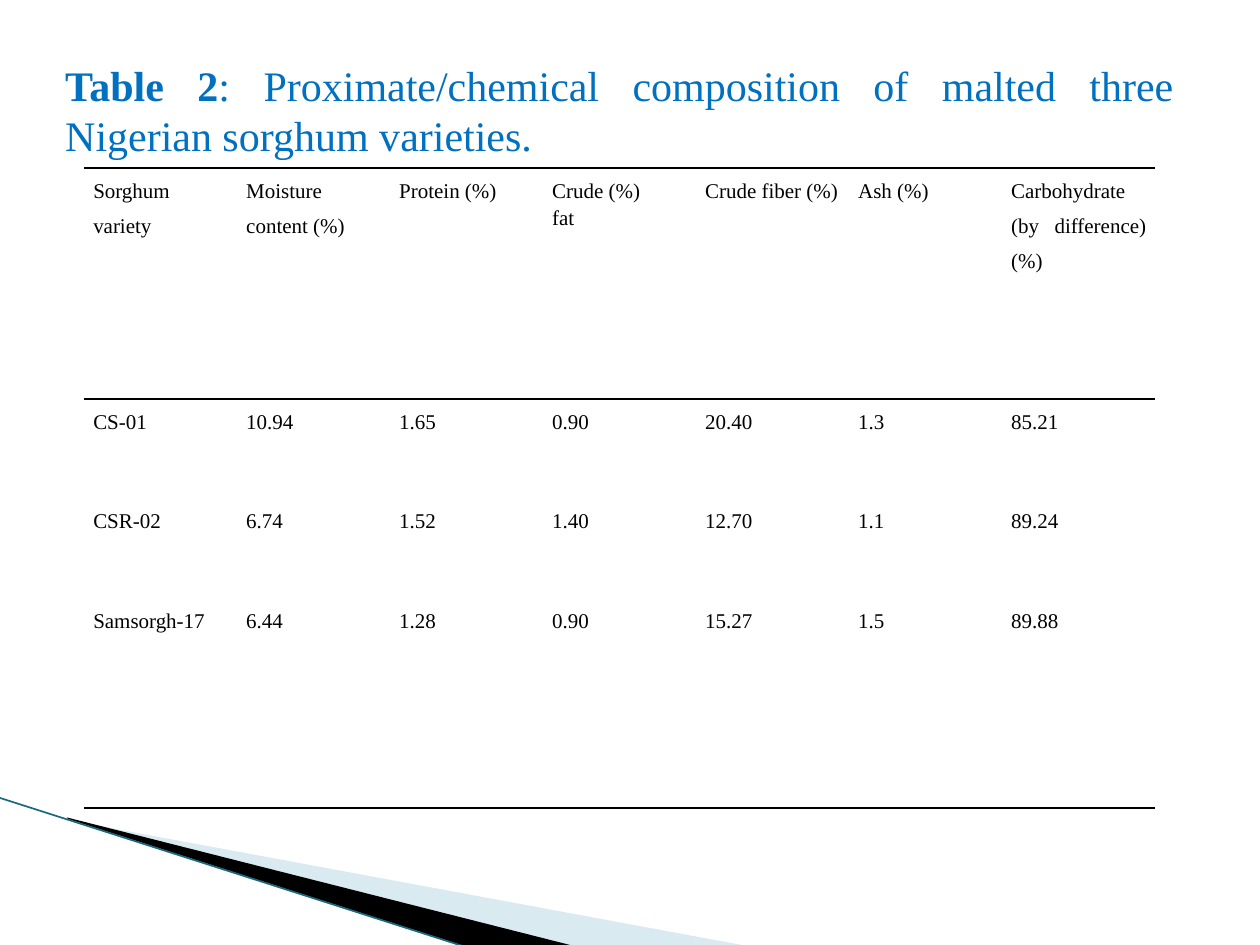
"""Build the slide with the proximate composition table of malted sorghum."""
import pptx
import pptx.dml.color
import pptx.enum.shapes
import pptx.enum.text
import pptx.oxml
import pptx.oxml.ns
import pptx.util
from pptx.util import Cm

FONT = "Times New Roman"
COLORS = {"title": "0070C0", "text": "000000", "rule": "000000",
          "pale": "A0CBDC", "dark": "000000", "edge": "17697B"}
TITLE = ("Table 2",
         ": Proximate/chemical composition of malted three Nigerian sorghum varieties.")
HEADER = [["Sorghum variety", "Moisture content (%)", "Protein (%)", "Crude (%)\nfat",
           "Crude fiber (%)", "Ash (%)", "Carbohydrate (by difference) (%)"]]
VALUES = [
    ["CS-01", "10.94", "1.65", "0.90", "20.40", "1.3", "85.21"],
    ["CSR-02", "6.74", "1.52", "1.40", "12.70", "1.1", "89.24"],
    ["Samsorgh-17", "6.44", "1.28", "0.90", "15.27", "1.5", "89.88"],
]
HEADER_HEIGHTS = [4.65]
VALUE_HEIGHTS = [2.01, 2.01, 4.23]
LEFT, TOP, WIDTH = 1.7, 3.39, 21.59
# Frames are in centimetres, wedge corners in hundredths of a centimetre.
WEDGES = [
    ("pale", 40, (1.98, 13.89, 10.57, 4.01),
     [(140, 1654), (1511, 1908), (1158, 1908), (140, 1651)]),
    ("dark", 100, (-0.15, 16.08, 10.57, 2.34),
     [(135, 1648), (1161, 1908), (945, 1910), (137, 1651)]),
]
ALIGN = pptx.enum.text.PP_ALIGN


def rgb(name):
    return pptx.dml.color.RGBColor.from_string(COLORS[name])


def style(font, size, color, bold=False):
    font.name, font.size, font.bold = FONT, pptx.util.Pt(size), bold
    font.color.rgb = rgb(color)


def set_frame(sp, frame):
    """Give the shape its frame while its outline stays where it is on the slide."""
    left, top, width, height = (Cm(v) for v in frame)
    outline = sp._element.spPr.find(".//" + pptx.oxml.ns.qn("a:path"))
    unit = sp.width / int(outline.get("w"))
    shifts = {"x": (sp.left - left) / unit, "y": (sp.top - top) / unit}
    for pt in outline.iter(pptx.oxml.ns.qn("a:pt")):
        for axis, shift in shifts.items():
            pt.set(axis, str(round(int(pt.get(axis)) + shift)))
    outline.set("w", str(round(width / unit)))
    outline.set("h", str(round(height / unit)))
    sp.left, sp.top, sp.width, sp.height = left, top, width, height


def add_wedge(s, color, opacity, frame, points):
    builder = s.shapes.build_freeform(*points[0], scale=Cm(0.01))
    builder.add_line_segments(points[1:], close=True)
    sp = builder.convert_to_shape()
    set_frame(sp, frame)
    sp.shadow.inherit = False
    sp.fill.solid()
    sp.fill.fore_color.rgb = rgb(color)
    sp.line.fill.background()
    if opacity < 100:
        clr = sp._element.spPr.find(".//" + pptx.oxml.ns.qn("a:srgbClr"))
        clr.append(pptx.oxml.parse_xml(
            f'<a:alpha {pptx.oxml.ns.nsdecls("a")} val="{opacity * 1000}"/>'))


def set_borders(cell, ruled):
    tc_pr = cell._tc.get_or_add_tcPr()
    for i, side in enumerate("LRTB"):
        fill = (f'<a:solidFill><a:srgbClr val="{COLORS["rule"]}"/></a:solidFill>'
                if side in ruled else "<a:noFill/>")
        tc_pr.insert(i, pptx.oxml.parse_xml(
            f'<a:ln{side} {pptx.oxml.ns.nsdecls("a")} w="12700">{fill}</a:ln{side}>'))


def fill_cell(cell, text, ruled):
    cell.margin_left = cell.margin_right = Cm(0.18)
    cell.margin_top = cell.margin_bottom = 0
    cell.fill.background()
    set_borders(cell, ruled)
    cell.text_frame.text = text
    for i, p in enumerate(cell.text_frame.paragraphs):
        p.alignment = ALIGN.LEFT if i else ALIGN.JUSTIFY
        p.line_spacing = 1.15 if i else 1.5
        for r in p.runs:
            style(r.font, 12, "text")


def add_grid(s, rows, heights, top):
    columns = len(rows[0])
    table = s.shapes.add_table(len(rows), columns, Cm(LEFT), Cm(top),
                               Cm(WIDTH), Cm(sum(heights))).table
    table.first_row = table.horz_banding = False
    for column in table.columns:
        column.width = int(Cm(WIDTH) / columns)
    for i, (row, height) in enumerate(zip(rows, heights)):
        table.rows[i].height = Cm(height)
        ruled = ("T" if i == 0 else "") + ("B" if i == len(rows) - 1 else "")
        for j, text in enumerate(row):
            fill_cell(table.cell(i, j), text, ruled)


def add_title(s):
    sp = s.shapes.title
    sp.left, sp.top, sp.width, sp.height = Cm(1.06), Cm(1.06), Cm(22.86), Cm(2.31)
    tf = sp.text_frame
    tf.word_wrap = True
    tf.auto_size = pptx.enum.text.MSO_AUTO_SIZE.SHAPE_TO_FIT_TEXT
    tf.vertical_anchor = pptx.enum.text.MSO_ANCHOR.MIDDLE
    p = tf.paragraphs[0]
    p.alignment = ALIGN.JUSTIFY
    for i, text in enumerate(TITLE):
        r = p.add_run()
        r.text = text
        style(r.font, 24, "title", bold=i == 0)


def main():
    prs = pptx.Presentation()
    prs.slide_width, prs.slide_height = Cm(25.4), Cm(19.05)
    s = prs.slides.add_slide(prs.slide_layouts[5])
    for wedge in WEDGES:
        add_wedge(s, *wedge)
    edge = s.shapes.add_connector(pptx.enum.shapes.MSO_CONNECTOR.STRAIGHT,
                                  Cm(-0.02), Cm(16.08), Cm(9.42), Cm(19.1))
    edge.line.color.rgb = rgb("edge")
    edge.line.width = pptx.util.Pt(0.95)
    edge._element.spPr.append(pptx.oxml.parse_xml(
        f'<a:effectLst {pptx.oxml.ns.nsdecls("a")}/>'))
    add_grid(s, HEADER, HEADER_HEIGHTS, TOP)
    add_grid(s, VALUES, VALUE_HEIGHTS, TOP + sum(HEADER_HEIGHTS))
    add_title(s)
    prs.save("out.pptx")


if __name__ == "__main__":
    main()
